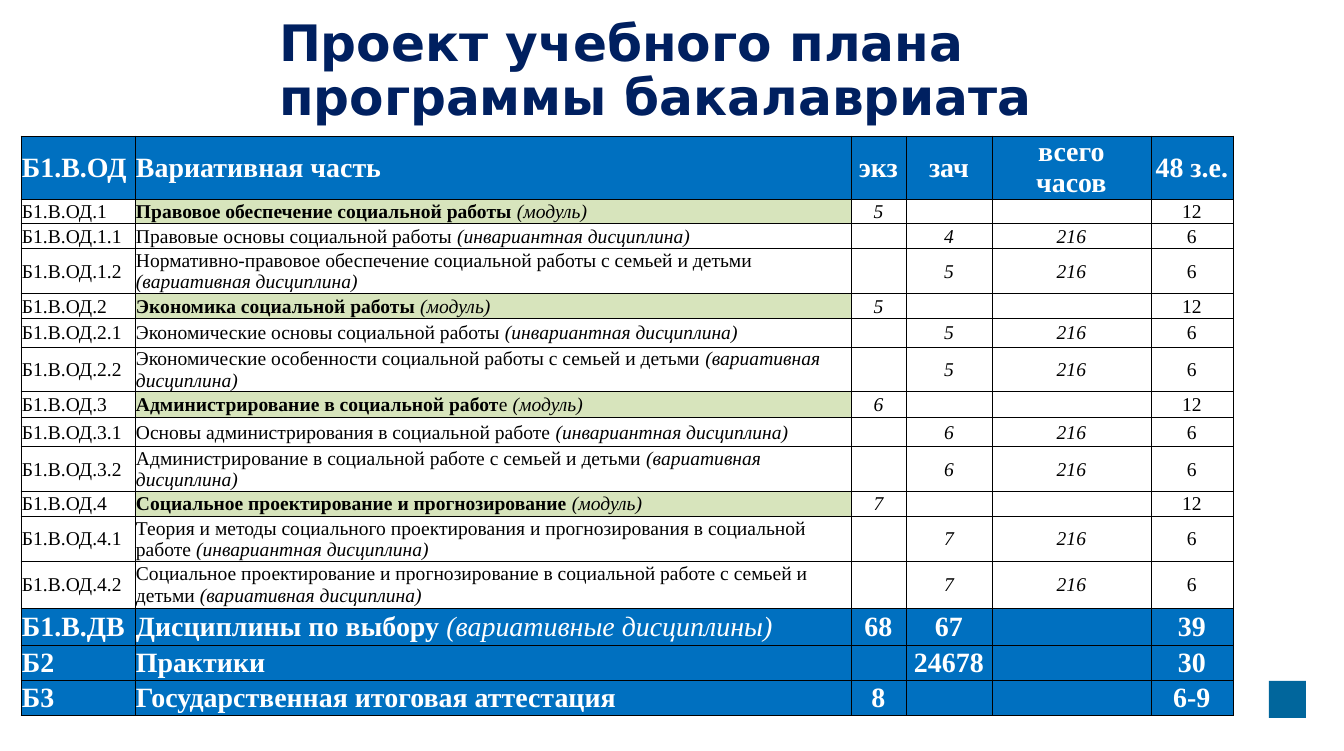
from lxml.etree import SubElement
from pptx import Presentation
from pptx.dml.color import RGBColor
from pptx.enum.shapes import MSO_SHAPE
from pptx.enum.text import MSO_ANCHOR, MSO_AUTO_SIZE, PP_ALIGN
from pptx.oxml.ns import qn
from pptx.util import Pt

EMU_PER_PX = 914400 / 100.4
NAVY = RGBColor(0x00, 0x20, 0x60)
BLUE = RGBColor(0x00, 0x70, 0xC0)
TEAL = RGBColor(0x01, 0x66, 0x9C)
GREEN = RGBColor(0xD7, 0xE4, 0xBC)
WHITE = RGBColor(0xFF, 0xFF, 0xFF)
BLACK = RGBColor(0x00, 0x00, 0x00)

COLUMN_WIDTHS = [114, 716, 55, 86, 159, 82]
ROW_HEIGHTS = [63, 24, 24, 45, 22, 29, 44, 26, 29, 45, 23, 45, 47, 37, 32, 32]
BAND = {"size": Pt(20), "bold": True, "color": WHITE}
BODY = {"size": Pt(14), "bold": False, "color": BLACK}
NOTE = {"bold": False, "italic": True}
DISCIPLINE_NOTES = ["(инвариантная дисциплина)", "(вариативная дисциплина)"]
MODULES = [
    ("Правовое обеспечение социальной работы", " ", "5", [
        ("Правовые основы социальной работы ", "4"),
        ("Нормативно-правовое обеспечение социальной работы с семьей и детьми ", "5")]),
    ("Экономика социальной работы", " ", "5", [
        ("Экономические основы социальной работы ", "5"),
        ("Экономические особенности социальной работы с семьей и детьми ", "5")]),
    ("Администрирование в социальной работ", "е ", "6", [
        ("Основы администрирования в социальной работе ", "6"),
        ("Администрирование в социальной работе с семьей и детьми ", "6")]),
    ("Социальное проектирование и прогнозирование", " ", "7", [
        ("Теория и методы социального проектирования и прогнозирования в социальной работе ", "7"),
        ("Социальное проектирование и прогнозирование в социальной работе с семьей и детьми ", "7")]),
]
HEADER = ["Б1.В.ОД", "Вариативная часть", "экз", "зач", "всего|часов", "48 з.е."]
TOTALS = [
    ["Б1.В.ДВ", [("Дисциплины по выбору", {}), (" (вариативные дисциплины)", NOTE)],
     "68", "67", "", "39"],
    ["Б2", "Практики", "", "24678", "", "30"],
    ["Б3", "Государственная итоговая аттестация", "8", "", "", "6-9"],
]


class Slide:
    """Draws styled elements on one page, with lengths in px."""

    def __init__(self, deck):
        self.page = deck.slides.add_slide(deck.slide_layouts[5])

    @staticmethod
    def px(length):
        return round(length * EMU_PER_PX)

    def add_text(self, para, text, style):
        for index, line in enumerate(text.split("|")):
            if index:
                para.add_line_break()
            span = para.add_run()
            span.text = line
            for name, value in style.items():
                if name == "color":
                    span.font.color.rgb = value
                else:
                    setattr(span.font, name, value)

    def title(self, text, left, top, width, height):
        box = self.page.shapes.title
        place = {"left": left, "top": top, "width": width, "height": height}
        for name, value in place.items():
            setattr(box, name, self.px(value))
        frame = box.text_frame
        layout = {"word_wrap": True, "auto_size": MSO_AUTO_SIZE.NONE,
                  "vertical_anchor": MSO_ANCHOR.TOP,
                  "margin_left": self.px(12), "margin_right": self.px(12),
                  "margin_top": self.px(9), "margin_bottom": self.px(6)}
        for name, value in layout.items():
            setattr(frame, name, value)
        para = frame.paragraphs[0]
        spacing = {"alignment": PP_ALIGN.LEFT, "line_spacing": 0.9, "space_before": Pt(0)}
        for name, value in spacing.items():
            setattr(para, name, value)
        self.add_text(para, text, {"name": "DejaVu Sans", "size": Pt(36),
                                   "bold": True, "color": NAVY})

    def square(self, left, top, side, color):
        box = self.page.shapes.add_shape(
            MSO_SHAPE.RECTANGLE, *map(self.px, (left, top, side, side)))
        box.shadow.inherit = False
        box.fill.solid()
        box.fill.fore_color.rgb = color
        box.line.fill.background()

    def table(self, left, top, widths, heights):
        frame = self.page.shapes.add_table(
            len(heights), len(widths),
            *map(self.px, (left, top, sum(widths), sum(heights))))
        grid = frame.table
        grid.first_row = grid.horz_banding = False
        for column, width in zip(grid.columns, widths):
            column.width = self.px(width)
        for row, height in zip(grid.rows, heights):
            row.height = self.px(height)
        return grid

    def cell(self, cell, spans, style, fill, alignment):
        layout = {"margin_left": self.px(1), "margin_right": self.px(1),
                  "margin_top": self.px(1), "margin_bottom": 0,
                  "vertical_anchor": MSO_ANCHOR.MIDDLE}
        for name, value in layout.items():
            setattr(cell, name, value)
        self.borders(cell)
        cell.fill.solid()
        cell.fill.fore_color.rgb = fill
        para = cell.text_frame.paragraphs[0]
        para.alignment = alignment
        for text, changes in spans:
            self.add_text(para, text, {"name": "Times New Roman", **style, **changes})
        if not spans:
            size = str(round(style["size"].pt * 100))
            SubElement(para._p, qn("a:endParaRPr"), sz=size)

    def borders(self, cell):
        properties = cell._tc.get_or_add_tcPr()
        for side in ("lnL", "lnR", "lnT", "lnB"):
            line = SubElement(properties, qn(f"a:{side}"), w=str(Pt(0.5)))
            fill = SubElement(line, qn("a:solidFill"))
            SubElement(fill, qn("a:srgbClr"), val=str(BLACK))


def plan_rows():
    """Return the rows of the plan as (values, style, name fill, fill)."""
    rows = [(HEADER, BAND, BLUE, BLUE)]
    for number, (name, ending, exam, disciplines) in enumerate(MODULES, 1):
        code = f"Б1.В.ОД.{number}"
        spans = [(name, {"bold": True}), (ending, {}), ("(модуль)", NOTE)]
        rows.append(([code, spans, exam, "", "", "12"], BODY, GREEN, WHITE))
        for part, (subject, test) in enumerate(disciplines, 1):
            spans = [(subject, {}), (DISCIPLINE_NOTES[part - 1], NOTE)]
            values = [f"{code}.{part}", spans, "", test, "216", "6"]
            rows.append((values, BODY, WHITE, WHITE))
    return rows + [(values, BAND, BLUE, BLUE) for values in TOTALS]


def main():
    deck = Presentation()
    deck.slide_width, deck.slide_height = Slide.px(1344), Slide.px(751)
    slide = Slide(deck)
    slide.square(1269, 681, 37, TEAL)
    slide.title("Проект учебного плана программы бакалавриата", 267, 9, 932, 74)
    grid = slide.table(21, 136, COLUMN_WIDTHS, ROW_HEIGHTS)
    for row, (values, style, name_fill, fill) in enumerate(plan_rows()):
        for column, value in enumerate(values):
            italic = {"italic": style is BODY and column in (2, 3, 4)}
            spans = value if isinstance(value, list) else [(value, italic)] if value else []
            slide.cell(grid.cell(row, column), spans, style,
                       name_fill if column == 1 else fill,
                       PP_ALIGN.LEFT if column < 2 else PP_ALIGN.CENTER)
    deck.save("out.pptx")


if __name__ == "__main__":
    main()
